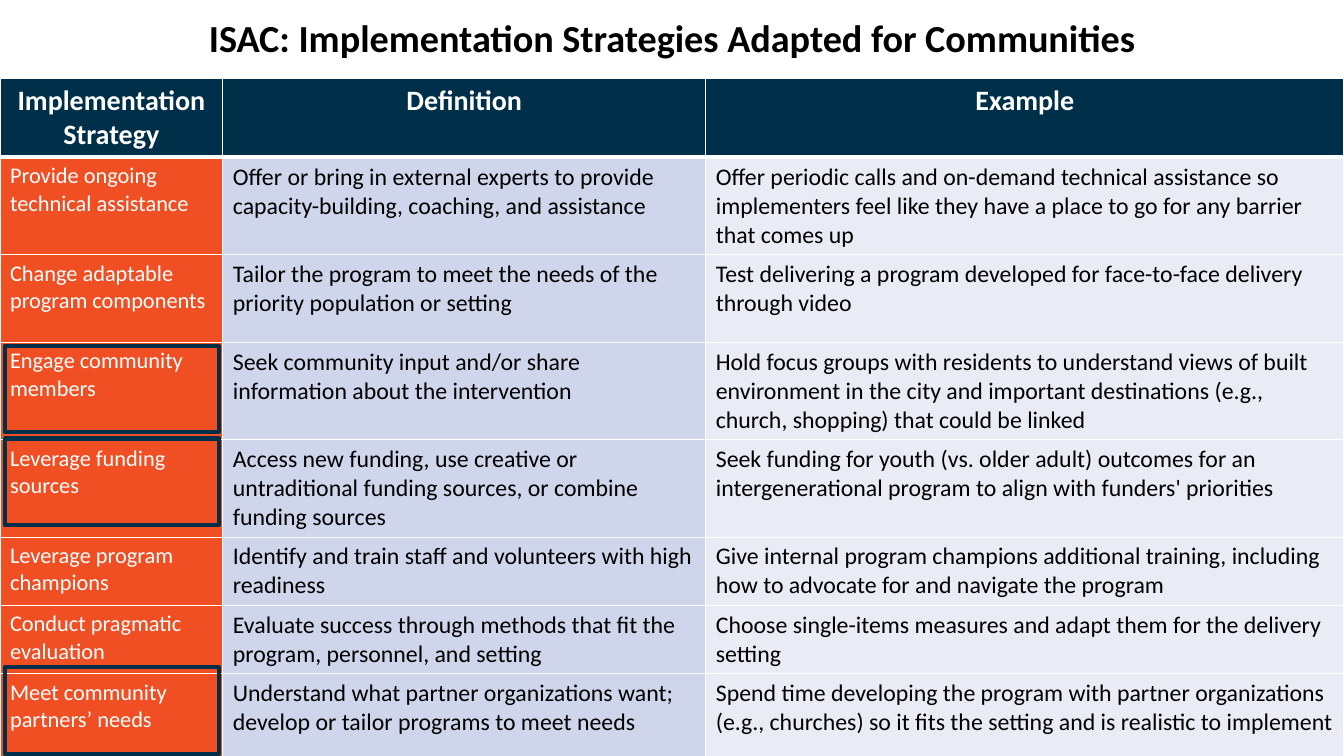
import lxml.etree
import pptx
import pptx.dml.color
import pptx.enum.shapes
import pptx.enum.text
import pptx.oxml.ns
import pptx.util

Inches, Pt = pptx.util.Inches, pptx.util.Pt
ALIGN = pptx.enum.text.PP_ALIGN
COLORS = {"navy": "003049", "orange": "F04E23", "lavender": "CFD5EA",
          "pale": "E9EBF5", "white": "FFFFFF", "black": "000000"}
SLIDE_WIDTH, SLIDE_HEIGHT = 13.33, 7.5
TABLE_TOP = 0.78
COLUMN_WIDTHS = [2.21, 4.79, 6.33]
ROW_HEIGHTS = [0.76, 0.95, 0.87, 0.95, 0.95, 0.66, 0.66, 0.9]
ROWS = [
    ("Implementation Strategy", "Definition", "Example"),
    ("Provide ongoing technical assistance",
     "Offer or bring in external experts to provide capacity-building, coaching, and assistance",
     "Offer periodic calls and on-demand technical assistance so implementers feel like "
     "they have a place to go for any barrier that comes up"),
    ("Change adaptable program components",
     "Tailor the program to meet the needs of the priority population or setting",
     "Test delivering a program developed for face-to-face delivery through video"),
    ("Engage community members",
     "Seek community input and/or share information about the intervention",
     "Hold focus groups with residents to understand views of built environment in the city "
     "and important destinations (e.g., church, shopping) that could be linked"),
    ("Leverage funding sources",
     "Access new funding, use creative or untraditional funding sources, "
     "or combine funding sources",
     "Seek funding for youth (vs. older adult) outcomes for an intergenerational program "
     "to align with funders' priorities"),
    ("Leverage program champions",
     "Identify and train staff and volunteers with high readiness",
     "Give internal program champions additional training, including how to advocate for "
     "and navigate the program"),
    ("Conduct pragmatic evaluation",
     "Evaluate success through methods that fit the program, personnel, and setting",
     "Choose single-items measures and adapt them for the delivery setting"),
    ("Meet community partners’ needs",
     "Understand what partner organizations want; develop or tailor programs to meet needs",
     "Spend time developing the program with partner organizations (e.g., churches) so it "
     "fits the setting and is realistic to implement"),
]


def format_text(paragraph, size, color, bold):
    for run in paragraph.runs:
        run.font.name = "Calibri"
        run.font.size = Pt(size)
        run.font.bold = bold
        run.font.color.rgb = pptx.dml.color.RGBColor.from_string(COLORS[color])


def add_borders(cell, bottom_width):
    properties = cell._tc.get_or_add_tcPr()
    for side, width in (("L", 1), ("R", 1), ("T", 1), ("B", bottom_width)):
        line = lxml.etree.SubElement(properties, pptx.oxml.ns.qn(f"a:ln{side}"),
                                     w=str(Pt(width)))
        fill = lxml.etree.SubElement(line, pptx.oxml.ns.qn("a:solidFill"))
        lxml.etree.SubElement(fill, pptx.oxml.ns.qn("a:srgbClr"), val=COLORS["white"])


presentation = pptx.Presentation()
presentation.slide_width = Inches(SLIDE_WIDTH)
presentation.slide_height = Inches(SLIDE_HEIGHT)
slide = presentation.slides.add_slide(presentation.slide_layouts[6])

# Strategy table
table = slide.shapes.add_table(
    len(ROWS), len(COLUMN_WIDTHS), 0, Inches(TABLE_TOP),
    Inches(SLIDE_WIDTH), Inches(sum(ROW_HEIGHTS))).table
table.horz_banding = False
for column, width in zip(table.columns, COLUMN_WIDTHS):
    column.width = Inches(width)
for row, height in zip(table.rows, ROW_HEIGHTS):
    row.height = Inches(height)

for row_index, texts in enumerate(ROWS):
    is_header = row_index == 0
    for column_index, text in enumerate(texts):
        cell = table.cell(row_index, column_index)
        cell.text_frame.text = text
        paragraph = cell.text_frame.paragraphs[0]
        if is_header:
            fill_color, size, text_color = "navy", 20, "white"
            paragraph.alignment = ALIGN.CENTER
        elif column_index == 0:
            fill_color, size, text_color = "orange", 16, "white"
        else:
            fill_color = ("lavender", "pale")[column_index - 1]
            size, text_color = 17, "black"
        format_text(paragraph, size, text_color, is_header)
        # The rule between header and body is thicker
        add_borders(cell, 3 if is_header else 1)
        cell.fill.solid()
        cell.fill.fore_color.rgb = pptx.dml.color.RGBColor.from_string(COLORS[fill_color])

# Frames around the highlighted strategies
for frame_top in (3.43, 4.35, 6.62):
    frame = slide.shapes.add_shape(
        pptx.enum.shapes.MSO_SHAPE.RECTANGLE,
        Inches(0.05), Inches(frame_top), Inches(2.12), Inches(0.86))
    frame.shadow.inherit = False
    frame.fill.background()
    frame.line.color.rgb = pptx.dml.color.RGBColor.from_string(COLORS["navy"])
    frame.line.width = Pt(3)

# Title
title = slide.shapes.add_textbox(0, Inches(0.02), Inches(SLIDE_WIDTH), Inches(0.76))
title.text_frame.word_wrap = True
title.text_frame.vertical_anchor = pptx.enum.text.MSO_ANCHOR.MIDDLE
title.text_frame.text = "ISAC: Implementation Strategies Adapted for Communities"
heading = title.text_frame.paragraphs[0]
heading.alignment = ALIGN.CENTER
heading.line_spacing = 0.9
format_text(heading, 27.3, "black", True)

presentation.save("out.pptx")
